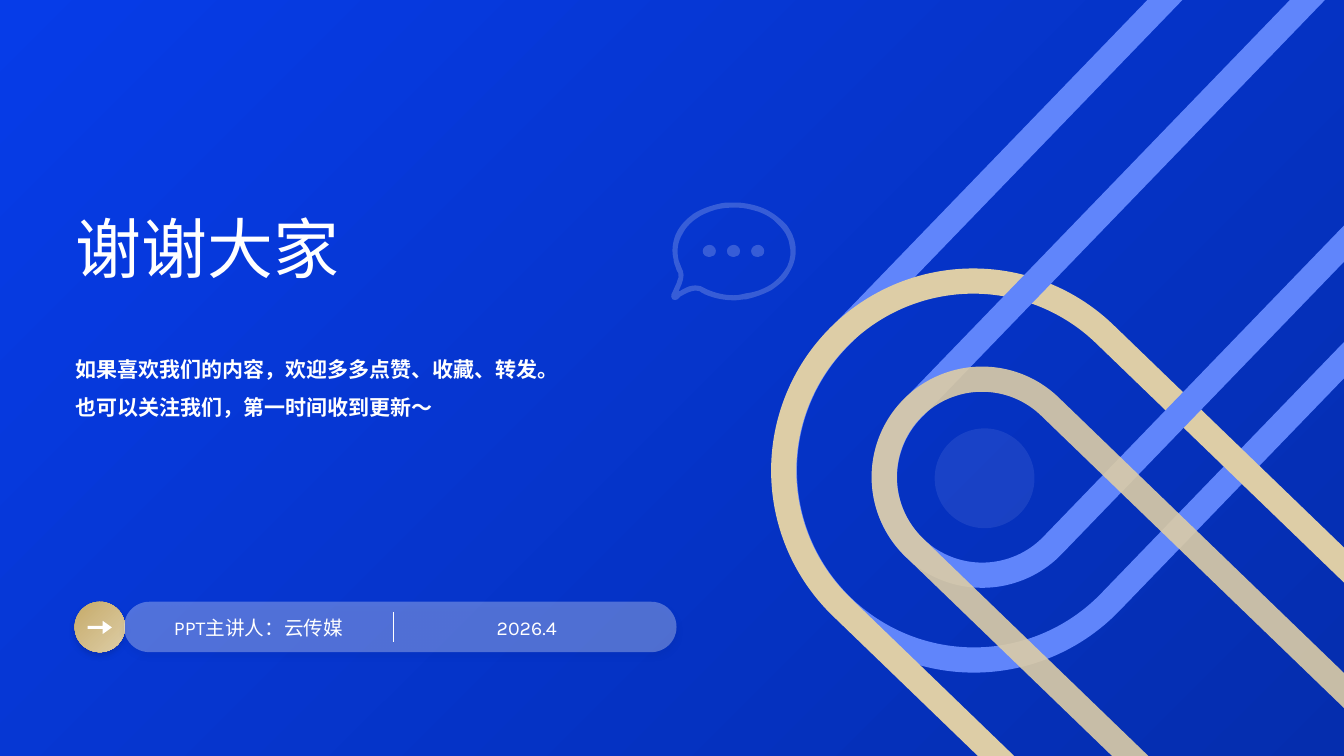
from dataclasses import dataclass

from lxml import etree
from pptx import Presentation
from pptx import util as u
from pptx.dml.color import RGBColor
from pptx.enum import shapes, text
from pptx.oxml import ns

KIND = shapes.MSO_SHAPE
ALIGN = text.PP_ALIGN
SANS = "Noto Sans CJK SC"
WHITE, BLUE, GOLD = "FFFFFF", "6085FB", "DDCDA6"
Box = tuple[float, float, float, float]


@dataclass
class Band:
    box: Box
    turn: int
    color: str
    alpha: int = 100


@dataclass
class Label:
    words: str
    box: Box
    size: int
    space: float = 1.1
    align: ALIGN = ALIGN.LEFT
    anchor: text.MSO_ANCHOR = text.MSO_ANCHOR.MIDDLE
    font: str = "Karla"
    bold: bool = False


BANDS = [
    Band((9.79, -2.19, 3.76, 9.55), 224, BLUE),
    Band((9.23, 2.17, 3.76, 7.81), 314, GOLD),
    Band((10.54, -0.61, 1.94, 7.03), 224, BLUE),
    Band((10.14, 3.18, 1.94, 5.75), 314, GOLD, 90),
]
PILL = [
    Label("PPT主讲人：云传媒", (1.53, 6.05, 2.07, 0.34), 14, align=ALIGN.CENTER),
    Label("2026.4", (4.19, 6.05, 2.07, 0.34), 14, align=ALIGN.CENTER),
]
BODY = [
    Label("谢谢大家", (0.75, 0.94, 6.44, 2.94), 47),
    Label("如果喜欢我们的内容，欢迎多多点赞、收藏、转发。也可以关注我们，第一时间收到更新～",
          (0.75, 3.41, 4.91, 1.69), 15, 1.5, anchor=text.MSO_ANCHOR.TOP, font=SANS, bold=True),
]
# Bubble rims: a start point, then two handles and an end point per curve
DOT = [
    7.04, 2.43, 7.07, 2.43, 7.1, 2.46, 7.1, 2.49, 7.1, 2.53, 7.07, 2.55, 7.04, 2.55,
    7, 2.55, 6.97, 2.53, 6.97, 2.49, 6.97, 2.46, 7, 2.43, 7.04, 2.43,
]
INNER = [
    7.31, 2.06, 7.26, 2.06, 7.21, 2.06, 7.15, 2.07, 7.08, 2.08, 7.01, 2.11, 6.95, 2.14,
    6.87, 2.19, 6.81, 2.24, 6.77, 2.32, 6.72, 2.4, 6.71, 2.49, 6.73, 2.58,
    6.74, 2.61, 6.75, 2.63, 6.76, 2.66, 6.77, 2.68, 6.78, 2.7, 6.78, 2.73,
    6.78, 2.76, 6.77, 2.79, 6.76, 2.82, 6.75, 2.84, 6.74, 2.87, 6.73, 2.89,
    6.74, 2.89, 6.74, 2.89, 6.74, 2.89, 6.77, 2.87, 6.81, 2.85, 6.84, 2.84,
    6.88, 2.83, 6.91, 2.83, 6.95, 2.84, 6.97, 2.85, 6.99, 2.86, 7.01, 2.87,
    7.1, 2.91, 7.19, 2.93, 7.28, 2.93, 7.32, 2.93, 7.36, 2.92, 7.4, 2.91,
    7.49, 2.9, 7.57, 2.87, 7.65, 2.82, 7.72, 2.77, 7.77, 2.71, 7.81, 2.64,
    7.84, 2.57, 7.85, 2.5, 7.83, 2.43, 7.82, 2.35, 7.78, 2.29, 7.72, 2.23,
    7.67, 2.17, 7.6, 2.13, 7.52, 2.1, 7.45, 2.08, 7.38, 2.06, 7.31, 2.06,
]
OUTER = [
    7.24, 2.01, 7.27, 2.01, 7.3, 2.01, 7.33, 2.01, 7.43, 2.02, 7.52, 2.04, 7.6, 2.08,
    7.68, 2.12, 7.74, 2.17, 7.8, 2.23, 7.85, 2.3, 7.88, 2.36, 7.89, 2.44,
    7.9, 2.53, 7.88, 2.62, 7.83, 2.7, 7.79, 2.78, 7.72, 2.83, 7.65, 2.88,
    7.57, 2.92, 7.49, 2.95, 7.4, 2.97, 7.36, 2.97, 7.32, 2.98, 7.29, 2.98,
    7.18, 2.98, 7.08, 2.96, 6.99, 2.92, 6.97, 2.91, 6.95, 2.9, 6.94, 2.89,
    6.91, 2.88, 6.88, 2.88, 6.86, 2.89, 6.82, 2.9, 6.79, 2.92, 6.75, 2.94,
    6.74, 2.95, 6.73, 2.96, 6.72, 2.97, 6.7, 2.98, 6.69, 2.98, 6.67, 2.97,
    6.66, 2.95, 6.65, 2.94, 6.66, 2.92, 6.68, 2.88, 6.69, 2.85, 6.71, 2.81,
    6.72, 2.79, 6.72, 2.77, 6.73, 2.75, 6.73, 2.72, 6.73, 2.7, 6.71, 2.68,
    6.7, 2.64, 6.68, 2.61, 6.68, 2.57, 6.66, 2.49, 6.67, 2.41, 6.7, 2.33,
    6.74, 2.24, 6.8, 2.18, 6.88, 2.12, 6.96, 2.07, 7.05, 2.04, 7.14, 2.02,
    7.18, 2.01, 7.21, 2.01, 7.24, 2.01,
]


def place(box: Box) -> list[u.Length]:
    return [u.Inches(n) for n in box]


def tint(fill, color: str, alpha: int = 100) -> None:
    """Make a fill solid, with its opacity in percent."""
    fill.solid()
    fill.fore_color.rgb = RGBColor.from_string(color)
    if alpha < 100:
        mark = fill._xPr.find(".//" + ns.qn("a:srgbClr"))
        etree.SubElement(mark, ns.qn("a:alpha"), val=str(alpha * 1000))


def blend(fill, *colors: str) -> None:
    """Fade from top left to bottom right."""
    fill.gradient()
    fill.gradient_angle = 315
    for stop, color in zip(fill.gradient_stops, colors):
        stop.color.rgb = RGBColor.from_string(color)


def shade(shape) -> None:
    """Drop a soft shadow straight down."""
    glow = etree.SubElement(shape._element.spPr.find(ns.qn("a:effectLst")), ns.qn("a:outerShdw"),
                            blurRad=str(u.Pt(4)), dist=str(u.Pt(3)), dir="5400000",
                            algn="t", rotWithShape="0")
    mark = etree.SubElement(glow, ns.qn("a:srgbClr"), val="031E74")
    etree.SubElement(mark, ns.qn("a:alpha"), val="25000")


def add(slide, kind: KIND, box: Box, *bends: float):
    """Add a preset shape without line or shadow."""
    shape = slide.shapes.add_shape(kind, *place(box))
    shape.shadow.inherit = False
    shape.line.fill.background()
    for spot, bend in enumerate(bends):
        shape.adjustments[spot] = bend
    return shape


def draw(slide, band: Band) -> None:
    shape = add(slide, KIND.ROUND_2_SAME_RECTANGLE, band.box, 0.5, 0)
    shape.rotation = band.turn
    shape.fill.background()
    tint(shape.line.fill, band.color, band.alpha)
    shape.line.width = u.Pt(18)


def write(slide, label: Label) -> None:
    frame = slide.shapes.add_textbox(*place(label.box)).text_frame
    frame.word_wrap = True
    frame.vertical_anchor = label.anchor
    frame.margin_left = frame.margin_top = frame.margin_right = frame.margin_bottom = 0
    para = frame.paragraphs[0]
    para.alignment = label.align
    para.line_spacing = label.space
    run = para.add_run()
    run.text = label.words
    font = run.font
    font.name, font.size, font.bold = label.font, u.Pt(label.size), label.bold
    tint(font.fill, WHITE)
    east = etree.Element(ns.qn("a:ea"), typeface=SANS)
    run._r.rPr.find(ns.qn("a:latin")).addnext(east)


def knots(rim: list[float], shift: float = 0) -> list[tuple[u.Length, u.Length]]:
    return [(u.Inches(x + shift), u.Inches(y)) for x, y in zip(rim[::2], rim[1::2])]


def curve(shape) -> None:
    """Turn every three straight segments into one cubic curve."""
    legs = list(shape._element.iter(ns.qn("a:lnTo")))
    for first in range(0, len(legs), 3):
        bend = etree.Element(ns.qn("a:cubicBezTo"))
        legs[first].addprevious(bend)
        for leg in legs[first:first + 3]:
            bend.append(leg[0])
            leg.getparent().remove(leg)


def bubble(slide) -> None:
    rims = [knots(DOT, 0.24 * col) for col in range(3)] + [knots(INNER), knots(OUTER)]
    pen = slide.shapes.build_freeform(*rims[0][0])
    for rim in rims:
        if rim is not rims[0]:
            pen.move_to(*rim[0])
        pen.add_line_segments(rim[1:])
    shape = pen.convert_to_shape()
    curve(shape)
    shape.shadow.inherit = False
    shape.line.fill.background()
    tint(shape.fill, WHITE, 20)


def main() -> None:
    deck = Presentation()
    deck.slide_width, deck.slide_height = u.Inches(13.33), u.Inches(7.5)
    slide = deck.slides.add_slide(deck.slide_layouts[6])
    blend(add(slide, KIND.RECTANGLE, (0, 0, 13.33, 7.5)).fill, "063CE8", "052DAE")
    for band in BANDS:
        draw(slide, band)
    tint(add(slide, KIND.OVAL, (9.27, 4.25, 0.99, 0.99)).fill, "CAD6FE", 10)

    disc = add(slide, KIND.OVAL, (0.74, 5.97, 0.5, 0.5))
    blend(disc.fill, "C6AB6A", GOLD)
    shade(disc)
    tint(add(slide, KIND.RIGHT_ARROW, (0.87, 6.16, 0.24, 0.13), 0.24, 0.7).fill, WHITE)
    pill = add(slide, KIND.ROUNDED_RECTANGLE, (1.23, 5.97, 5.48, 0.5), 0.5)
    tint(pill.fill, WHITE, 30)
    shade(pill)
    for label in PILL:
        write(slide, label)
    rule = slide.shapes.add_connector(shapes.MSO_CONNECTOR.STRAIGHT, *place((3.9, 6.07, 3.9, 6.37)))
    tint(rule.line.fill, WHITE)
    rule.line.width = u.Pt(1)
    etree.SubElement(rule._element.spPr, ns.qn("a:effectLst"))

    bubble(slide)
    for label in BODY:
        write(slide, label)
    deck.save("out.pptx")


if __name__ == "__main__":
    main()
